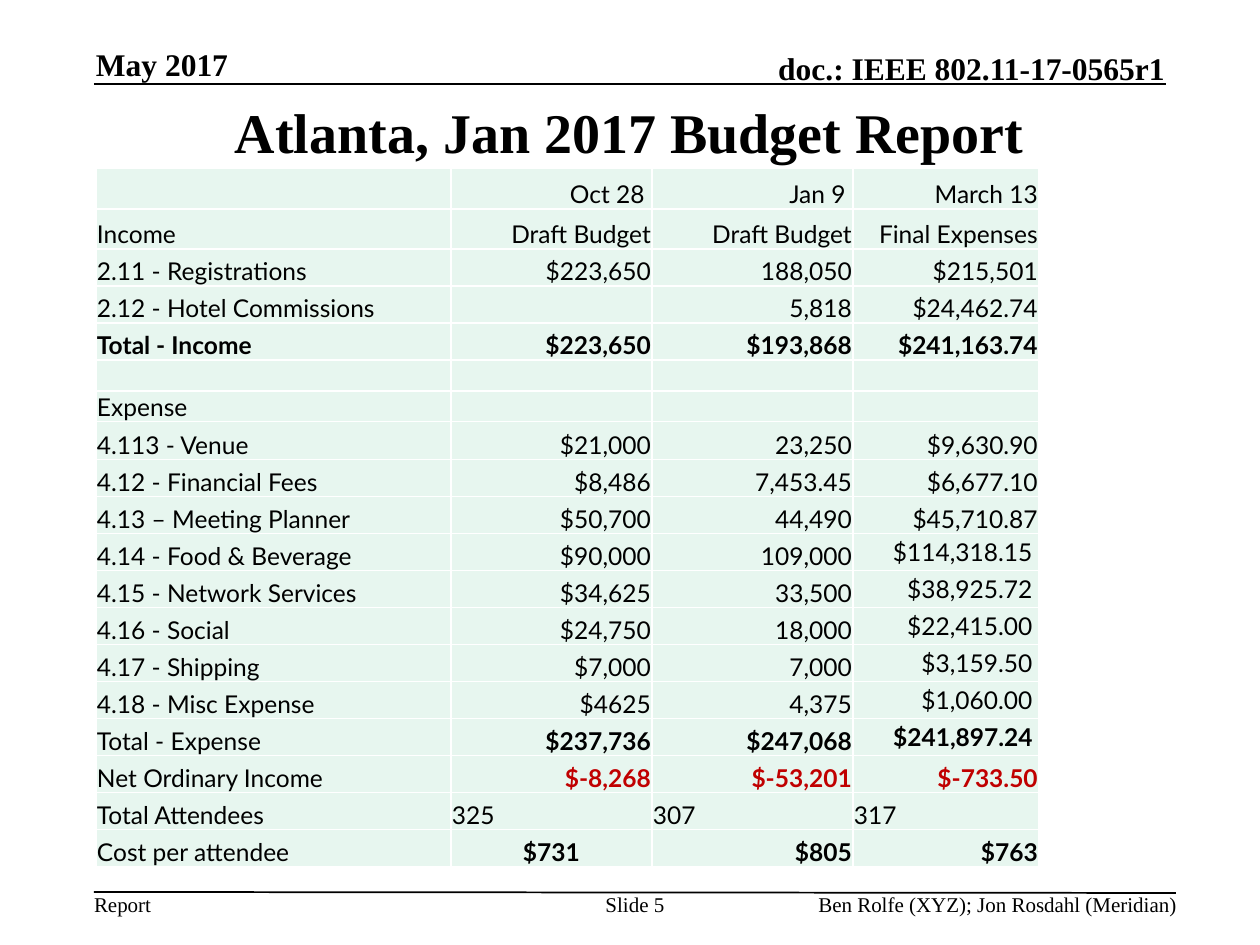
from lxml.etree import SubElement
from pptx import Presentation
from pptx.dml.color import RGBColor
from pptx.enum.shapes import MSO_CONNECTOR
from pptx.enum.text import MSO_ANCHOR, PP_ALIGN
from pptx.oxml.ns import qn
from pptx.util import Emu, Pt

SCALE = 914400 // 126  # EMU per px
SERIF, SANS = "Times New Roman", "Lato"
BLACK, RED, MINT, WHITE = "000000", "C00000", "E7F6EF", "FFFFFF"
LEFT, CENTER, RIGHT = PP_ALIGN.LEFT, PP_ALIGN.CENTER, PP_ALIGN.RIGHT
TOP, MIDDLE, BOTTOM = MSO_ANCHOR.TOP, MSO_ANCHOR.MIDDLE, MSO_ANCHOR.BOTTOM

# Text, box (left, top, width, height), size, bold, alignment, anchor, wrap
LABELS = [
    ("May 2017", (96, 45, 258, 38), 18, True, LEFT, BOTTOM, True),
    ("doc.: IEEE 802.11-17-0565r1", (494, 49, 671, 38), 18, True, RIGHT, BOTTOM, True),
    ("Atlanta, Jan 2017 Budget Report", (94, 95, 1071, 73), 32, True, CENTER, MIDDLE, True),
    ("Report", (94, 892, 58, 25), 12, False, LEFT, TOP, False),
    ("Slide 5", (598, 892, 74, 50), 12, False, CENTER, TOP, True),
    ("Ben Rolfe (XYZ); Jon Rosdahl (Meridian)", (777, 892, 400, 32), 12, False, RIGHT, TOP, True),
]
RULES = [(94, 84, 1166, 84), (94, 892, 1176, 893)]

BUDGET = [
    ("", "Oct 28 ", "Jan 9 ", "March 13"),
    ("Income", "Draft Budget", "Draft Budget", "Final Expenses"),
    ("2.11 - Registrations", "$223,650", "188,050", "$215,501"),
    ("2.12 - Hotel Commissions", "", "5,818", "$24,462.74"),
    ("Total - Income", "$223,650", "$193,868", "$241,163.74"),
    ("", "", "", ""),
    ("Expense", "", "", ""),
    ("4.113 - Venue", "$21,000", "23,250", "$9,630.90"),
    ("4.12 - Financial Fees", "$8,486", "7,453.45", "$6,677.10"),
    ("4.13 – Meeting Planner", "$50,700", "44,490", "$45,710.87"),
    ("4.14 - Food & Beverage", "$90,000", "109,000", "$114,318.15 "),
    ("4.15 - Network Services", "$34,625", "33,500", "$38,925.72 "),
    ("4.16 - Social", "$24,750", "18,000", "$22,415.00 "),
    ("4.17 - Shipping", "$7,000", "7,000", "$3,159.50 "),
    ("4.18 - Misc Expense", "$4625", "4,375", "$1,060.00 "),
    ("Total - Expense", "$237,736", "$247,068", "$241,897.24 "),
    ("Net Ordinary Income", "$-8,268", "$-53,201", "$-733.50"),
    ("Total Attendees", "325", "307", "317"),
    ("Cost per attendee", "$731", "$805", "$763"),
]
TABLE_LEFT, TABLE_TOP = 96, 168
COLUMN_WIDTHS = [355, 201, 201, 186]
USUAL_HEIGHT = 37
OTHER_HEIGHTS = {0: 41, 1: 40, 5: 31, 6: 31, 7: 38}
BOLD_AMOUNTS = {"Total - Income", "Total - Expense", "Net Ordinary Income", "Cost per attendee"}
RAISED_ROWS = range(10, 16)  # final expenses set at mid-height


def px(length):
    return Emu(length * SCALE)


def color(value):
    return RGBColor.from_string(value)


def style(paragraph, font, size, bold, align, ink=BLACK):
    paragraph.alignment = align
    for run in paragraph.runs:
        run.font.name = font
        run.font.size = Pt(size)
        run.font.bold = bold
        run.font.color.rgb = color(ink)


def add_label(slide, text, box, size, bold, align, anchor, wrap):
    frame = slide.shapes.add_textbox(*map(px, box)).text_frame
    frame.margin_left = frame.margin_right = frame.margin_top = frame.margin_bottom = 0
    frame.word_wrap = wrap
    frame.vertical_anchor = anchor
    frame.text = text
    style(frame.paragraphs[0], SERIF, size, bold, align)


def add_rule(slide, ends):
    rule = slide.shapes.add_connector(MSO_CONNECTOR.STRAIGHT, *map(px, ends))
    rule.line.color.rgb = color(BLACK)
    rule.line.width = Pt(1)
    SubElement(rule._element.spPr, qn("a:effectLst"))


def add_borders(cell):
    properties = cell._tc.get_or_add_tcPr()
    for position, side in enumerate(("lnL", "lnR", "lnT", "lnB")):
        border = SubElement(properties, qn(f"a:{side}"), w=str(Pt(1)))
        fill = SubElement(border, qn("a:solidFill"))
        SubElement(fill, qn("a:srgbClr"), val=WHITE)
        properties.insert(position, border)


def amount_align(item, column):
    if item == "Total Attendees":
        return LEFT
    return CENTER if (item, column) == ("Cost per attendee", 1) else RIGHT


def fill_cell(cell, text, item, row, column):
    raised = column == 3 and row in RAISED_ROWS
    margin = px(0 if raised else 1)
    cell.margin_left = cell.margin_right = cell.margin_top = margin
    cell.margin_bottom = 0
    cell.vertical_anchor = MIDDLE if raised else BOTTOM
    cell.fill.solid()
    cell.fill.fore_color.rgb = color(MINT)
    add_borders(cell)
    cell.text = text
    paragraph = cell.text_frame.paragraphs[0]
    if not text:
        paragraph.font.size = Pt(14)
    bold = item == "Total - Income" or (column > 0 and item in BOLD_AMOUNTS)
    ink = RED if column > 0 and item == "Net Ordinary Income" else BLACK
    align = amount_align(item, column) if column else LEFT
    style(paragraph, SANS, 14, bold, align, ink)


def add_budget(slide):
    heights = [OTHER_HEIGHTS.get(row, USUAL_HEIGHT) for row in range(len(BUDGET))]
    table = slide.shapes.add_table(
        len(BUDGET), len(COLUMN_WIDTHS), px(TABLE_LEFT), px(TABLE_TOP),
        px(sum(COLUMN_WIDTHS)), px(sum(heights))).table
    table.first_row = table.horz_banding = False
    for column, width in zip(table.columns, COLUMN_WIDTHS):
        column.width = px(width)
    for row, entries in enumerate(BUDGET):
        table.rows[row].height = px(heights[row])
        for column, text in enumerate(entries):
            fill_cell(table.cell(row, column), text, entries[0], row, column)


def main():
    deck = Presentation()
    deck.slide_width, deck.slide_height = px(1260), px(945)
    slide = deck.slides.add_slide(deck.slide_layouts[6])
    # Header and footer
    for ends in RULES:
        add_rule(slide, ends)
    for label in LABELS:
        add_label(slide, *label)
    # Budget table
    add_budget(slide)
    deck.save("out.pptx")


if __name__ == "__main__":
    main()
